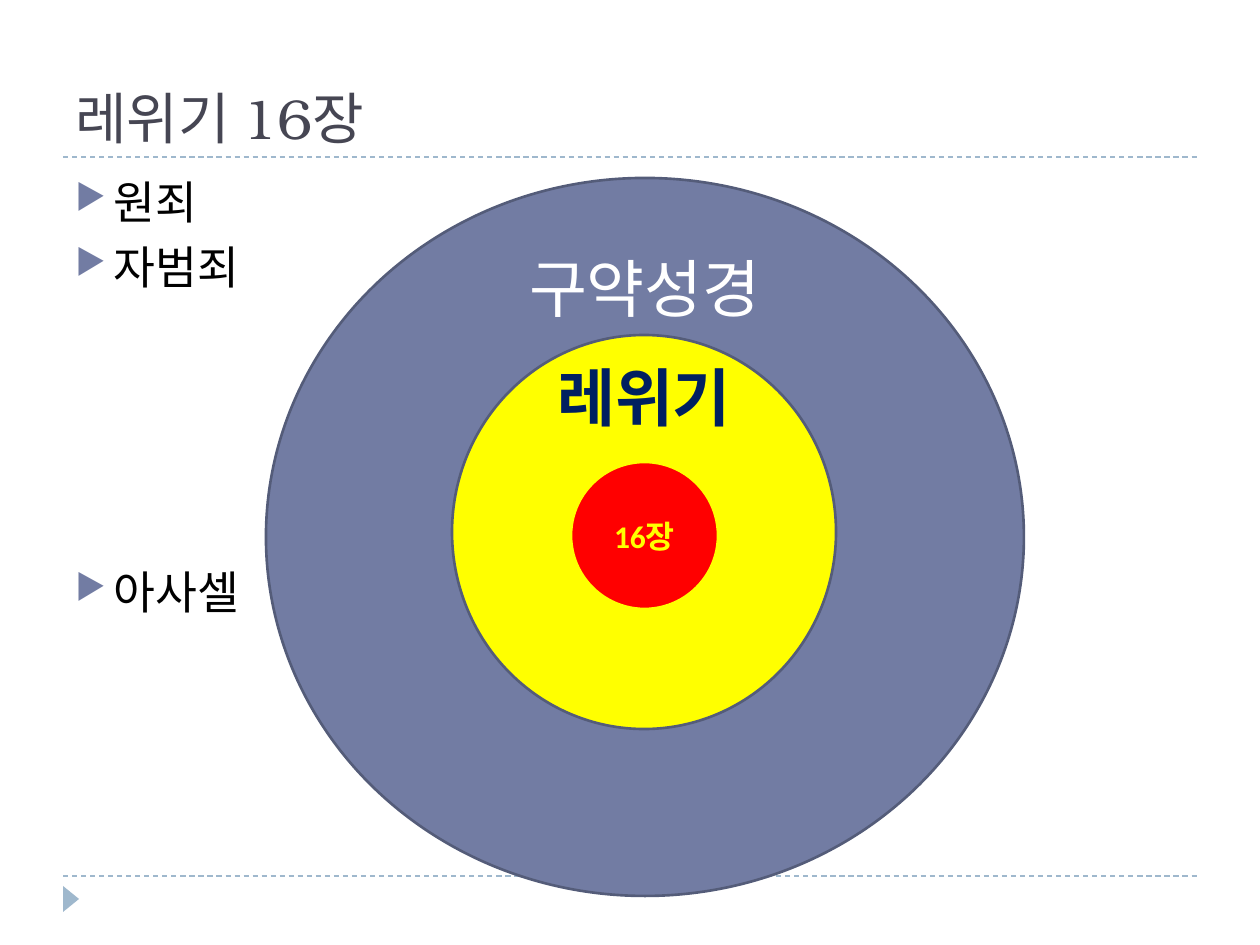
"""Build a slide of nested circles placing Leviticus 16 inside the Old Testament."""
from lxml.etree import SubElement
from pptx import Presentation
from pptx.dml.color import RGBColor
from pptx.enum.dml import MSO_LINE
from pptx.enum.shapes import MSO_CONNECTOR, MSO_SHAPE
from pptx.enum.text import MSO_ANCHOR, PP_ALIGN
from pptx.oxml.ns import qn
from pptx.util import Emu, Pt

COLORS = {
    "rule": "9FB8CD", "title": "464653", "black": "000000", "white": "FFFFFF",
    "slate": "727CA3", "edge": "545C79", "yellow": "FFFF00", "navy": "002060", "red": "FF0000",
}
TITLE = "레위기 16장"
BULLETS = [("원죄", 6), ("자범죄", 6), ("아사셀", 154.6)]
CIRCLES = [
    {"text": "구약성경", "at": (266, 178, 758, 718), "fill": "slate", "line": "edge",
     "lift": 250, "font": {"size": 36, "color": "white"}},
    {"text": "레위기", "at": (452, 335, 384, 394), "fill": "yellow", "line": "edge",
     "lift": 136, "font": {"size": 36, "color": "navy", "bold": True}},
    {"text": "16장", "at": (571, 462, 147, 147), "fill": "red", "line": "yellow",
     "lift": 0, "font": {"size": 18, "color": "yellow", "bold": True}},
]
RULE_TOPS = (157, 876)
RULE_LEFT, RULE_RIGHT = 63, 1197
MARKER = (58, 891, 26, 16)


def px(value):
    return Emu(round(value * 914400 / 126))


def rgb(name):
    return RGBColor.from_string(COLORS[name])


def write(para, text, size=18, color="black", font="Calibri", bold=False, align=PP_ALIGN.LEFT):
    para.alignment = align
    span = para.add_run()
    span.text = text
    span.font.size = Pt(size)
    span.font.name = font
    span.font.bold = bold
    span.font.color.rgb = rgb(color)


def add_rule(page, top):
    rule = page.shapes.add_connector(
        MSO_CONNECTOR.STRAIGHT, px(RULE_LEFT), px(top), px(RULE_RIGHT), px(top))
    rule.line.color.rgb = rgb("rule")
    rule.line.width = Pt(0.75)
    rule.line.dash_style = MSO_LINE.DASH
    SubElement(rule._element.spPr, qn("a:effectLst"))


def add_shape(page, kind, at, fill, line=None):
    shape = page.shapes.add_shape(kind, *map(px, at))
    shape.shadow.inherit = False
    shape.fill.solid()
    shape.fill.fore_color.rgb = rgb(fill)
    if line:
        shape.line.color.rgb = rgb(line)
        shape.line.width = Pt(1.5)
    else:
        shape.line.fill.background()
    return shape


def add_box(page, at, anchor):
    frame = page.shapes.add_textbox(*map(px, at)).text_frame
    frame.word_wrap = True
    frame.vertical_anchor = anchor
    return frame


def add_bullet(para):
    properties = para._p.get_or_add_pPr()
    properties.set("marL", str(px(38)))
    properties.set("indent", str(-px(38)))
    color = SubElement(properties, qn("a:buClr"))
    SubElement(color, qn("a:srgbClr"), val=COLORS["slate"])
    SubElement(properties, qn("a:buSzPct"), val="76000")
    SubElement(properties, qn("a:buChar"), char="▶")


def add_circle(page, circle):
    shape = add_shape(page, MSO_SHAPE.OVAL, circle["at"], circle["fill"], circle["line"])
    frame = shape.text_frame
    frame.word_wrap = True
    frame.vertical_anchor = MSO_ANCHOR.MIDDLE
    frame.margin_top = 0
    frame.margin_bottom = px(2 * circle["lift"])
    write(frame.paragraphs[0], circle["text"], align=PP_ALIGN.CENTER, **circle["font"])


def main():
    deck = Presentation()
    deck.slide_width, deck.slide_height = px(1260), px(945)
    page = deck.slides.add_slide(deck.slide_layouts[6])

    for top in reversed(RULE_TOPS):
        add_rule(page, top)
    marker = add_shape(page, MSO_SHAPE.ISOSCELES_TRIANGLE, MARKER, "rule")
    marker.rotation = 90

    title = add_box(page, (63, 21, 1134, 136), MSO_ANCHOR.BOTTOM)
    write(title.paragraphs[0], TITLE, size=32, color="title", font="TeX Gyre Bonum")

    body = add_box(page, (63, 168, 1134, 680), MSO_ANCHOR.TOP)
    for index, (text, space) in enumerate(BULLETS):
        para = body.add_paragraph() if index else body.paragraphs[0]
        write(para, text, size=26)
        para.space_before = Pt(space)
        add_bullet(para)

    for circle in CIRCLES:
        add_circle(page, circle)
    deck.save("out.pptx")


if __name__ == "__main__":
    main()
